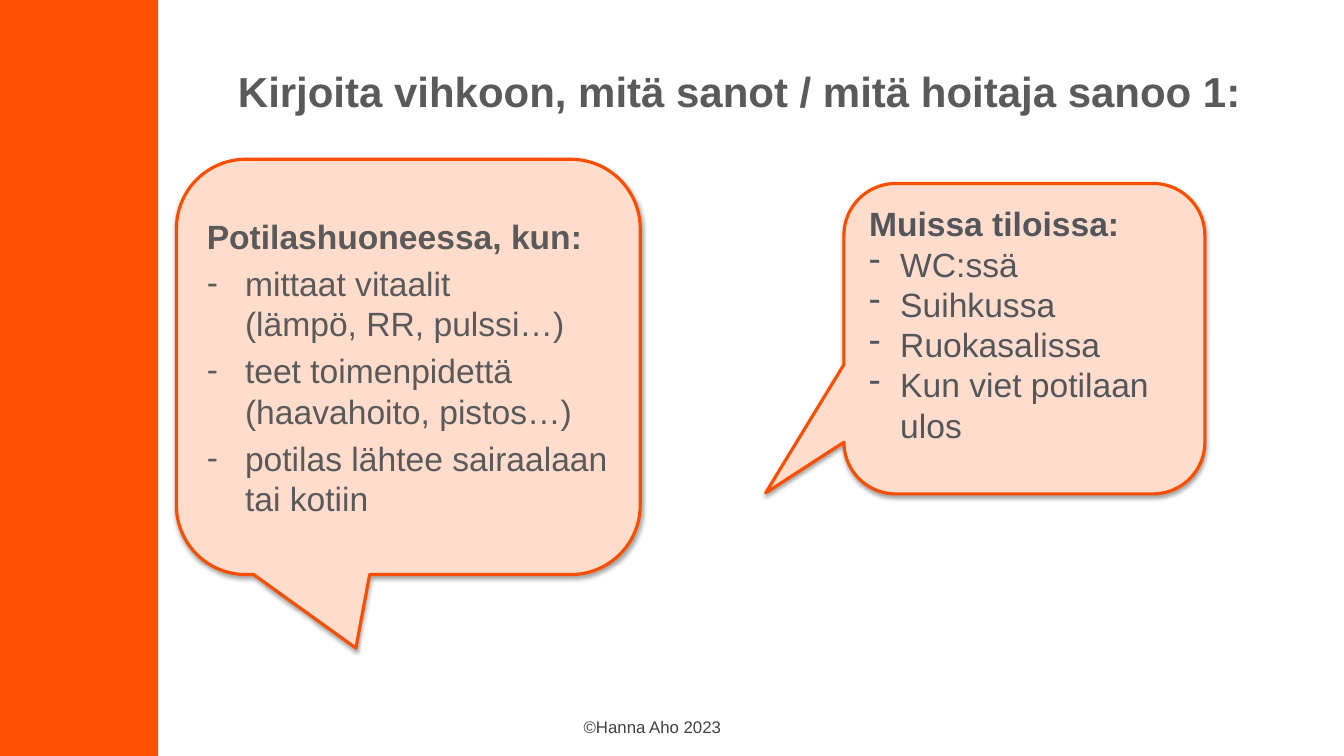
from lxml import etree
from pptx import Presentation, util as u
from pptx.dml.color import RGBColor
from pptx.enum import shapes, text
from pptx.oxml import parse_xml
from pptx.oxml.ns import nsdecls, qn

FONT = "Arial"
ORANGE, OUTLINE, PEACH = "FF5000", "F94E00", "FFDCCC"
GRAY, SLATE, FOOTER_GRAY = "5A5A5A", "53565A", "3E4043"


def color(hex_value):
    return RGBColor.from_string(hex_value)


def place(shape, box):
    shape.left, shape.top, shape.width, shape.height = map(u.Inches, box)


def format_runs(paragraph, size, hex_value, bold=False):
    for run in paragraph.runs:
        run.font.name = FONT
        run.font.size = u.Pt(size)
        run.font.bold = bold
        run.font.color.rgb = color(hex_value)


def set_bullet(paragraph, indent):
    """Give the paragraph a hanging dash, or no bullet when indent is 0."""
    properties = paragraph._p.get_or_add_pPr()
    properties.set("marL", str(u.Inches(indent)))
    properties.set("indent", str(-u.Inches(indent)))
    if indent:
        etree.SubElement(properties, qn("a:buFontTx"))
        etree.SubElement(properties, qn("a:buChar")).set("char", "-")
    else:
        etree.SubElement(properties, qn("a:buNone"))


def add_side_bar(slide, box):
    bar = slide.shapes.add_shape(shapes.MSO_SHAPE.RECTANGLE, *map(u.Inches, box))
    bar.shadow.inherit = False
    bar.fill.solid()
    bar.fill.fore_color.rgb = color(ORANGE)
    bar.line.fill.background()


def fill_title(title, box, wording):
    place(title, box)
    frame = title.text_frame
    frame.text = wording
    frame.auto_size = text.MSO_AUTO_SIZE.NONE
    frame.vertical_anchor = text.MSO_ANCHOR.BOTTOM
    frame.paragraphs[0].alignment = text.PP_ALIGN.LEFT
    format_runs(frame.paragraphs[0], 30, GRAY, bold=True)


def style_bubble(bubble, tail):
    """Colour a speech bubble and aim its tail, given as shares of its size."""
    bubble.adjustments[0], bubble.adjustments[1] = tail
    bubble.adjustments[2] = 0.167
    bubble.fill.solid()
    bubble.fill.fore_color.rgb = color(PEACH)
    bubble.line.color.rgb = color(OUTLINE)
    bubble.line.width = u.Pt(2.25)
    bubble._element.spPr.append(parse_xml(
        f'<a:effectLst {nsdecls("a")}>'
        '<a:outerShdw blurRad="40000" dist="23000" dir="5400000" rotWithShape="0">'
        '<a:srgbClr val="000000"><a:alpha val="35000"/></a:srgbClr>'
        '</a:outerShdw></a:effectLst>'))


def write_list(frame, heading, items, hex_value, indent, gap):
    frame.word_wrap = True
    frame.auto_size = text.MSO_AUTO_SIZE.NONE
    frame.vertical_anchor = text.MSO_ANCHOR.MIDDLE
    for index, wording in enumerate([heading, *items]):
        paragraph = frame.add_paragraph() if index else frame.paragraphs[0]
        paragraph.text = wording
        set_bullet(paragraph, indent if index else 0)
        paragraph.alignment = text.PP_ALIGN.LEFT
        paragraph.space_before = u.Pt(gap if index else 0)
        format_runs(paragraph, 24, hex_value, bold=index == 0)


def fill_patient_room_bubble(body, box):
    place(body, box)
    body._element.spPr.append(parse_xml(
        f'<a:prstGeom {nsdecls("a")} prst="wedgeRoundRectCallout"><a:avLst/></a:prstGeom>'))
    style_bubble(body, (-0.113, 0.677))
    write_list(body.text_frame, "Potilashuoneessa, kun:", [
        "mittaat vitaalit\v(lämpö, RR, pulssi…)",
        "teet toimenpidettä (haavahoito, pistos…)",
        "potilas lähtee sairaalaan tai kotiin",
    ], GRAY, indent=0.38, gap=4.8)


def add_other_rooms_bubble(slide, box):
    bubble = slide.shapes.add_shape(
        shapes.MSO_SHAPE.ROUNDED_RECTANGULAR_CALLOUT, *map(u.Inches, box))
    style_bubble(bubble, (-0.717, 0.497))
    bubble.text_frame.margin_bottom = u.Inches(0.34)
    write_list(bubble.text_frame, "Muissa tiloissa:", [
        "WC:ssä", "Suihkussa", "Ruokasalissa", "Kun viet potilaan ulos",
    ], SLATE, indent=0.31, gap=0)


def add_copyright(slide, box):
    frame = slide.shapes.add_textbox(*map(u.Inches, box)).text_frame
    frame.word_wrap = True
    frame.text = "©Hanna Aho 2023"
    format_runs(frame.paragraphs[0], 12, FOOTER_GRAY)


def main():
    presentation = Presentation()
    presentation.slide_width = u.Inches(13.33)
    presentation.slide_height = u.Inches(7.5)
    slide = presentation.slides.add_slide(presentation.slide_layouts[1])
    add_side_bar(slide, (0, 0, 1.57, 7.5))
    fill_title(slide.shapes.title, (2.26, 0.59, 10.68, 0.61),
               "Kirjoita vihkoon, mitä sanot / mitä hoitaja sanoo 1:")
    fill_patient_room_bubble(slide.placeholders[1], (1.75, 1.58, 4.6, 4.12))
    add_other_rooms_bubble(slide, (8.37, 1.82, 3.58, 3.08))
    add_copyright(slide, (5.69, 7.06, 1.95, 0.3))
    presentation.save("out.pptx")


if __name__ == "__main__":
    main()
